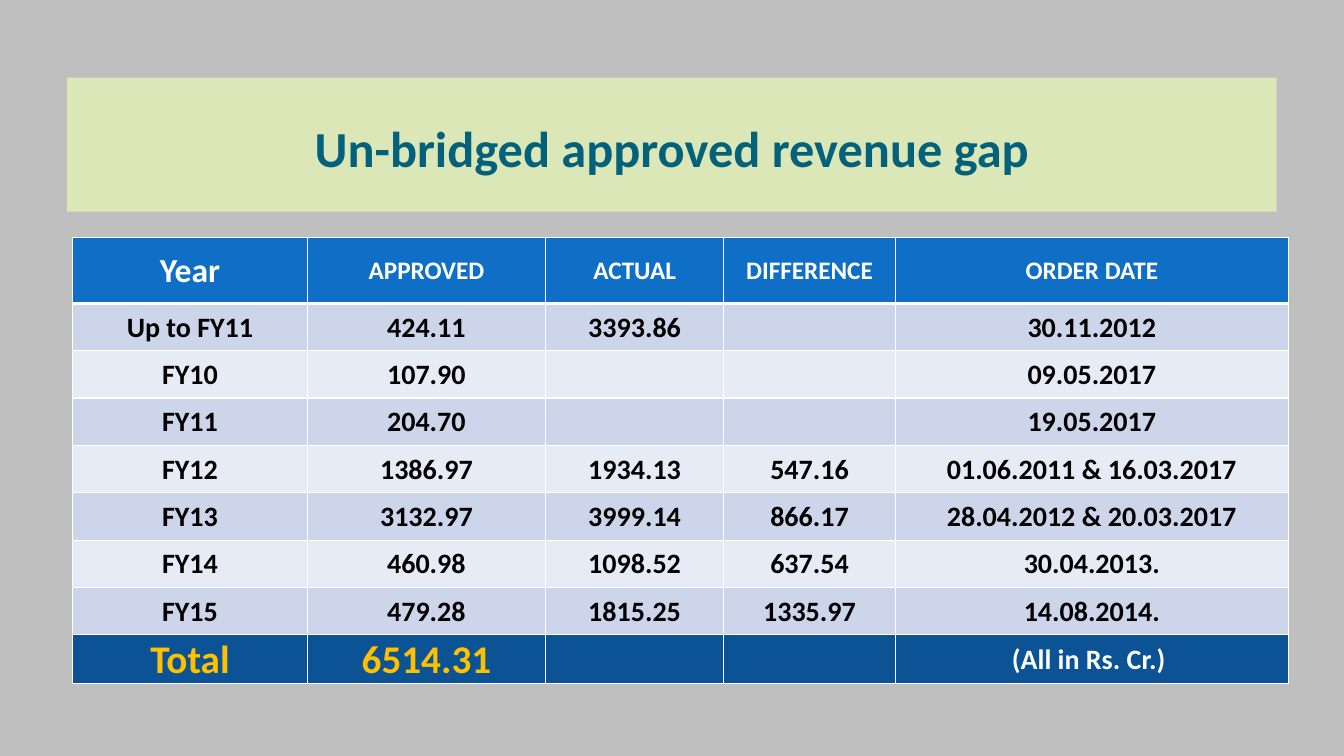
from lxml import etree
from pptx import Presentation
from pptx.dml.color import RGBColor
from pptx.enum.shapes import MSO_SHAPE
from pptx.enum.text import MSO_ANCHOR, PP_ALIGN
from pptx.oxml.ns import qn
from pptx.util import Inches, Pt

RECT = MSO_SHAPE.RECTANGLE
MIDDLE = MSO_ANCHOR.MIDDLE
CENTER = PP_ALIGN.CENTER

TITLE = "Un-bridged approved revenue gap"
ROWS = [
    ("Year", "APPROVED", "ACTUAL", "DIFFERENCE", "ORDER DATE"),
    ("Up to FY11", "424.11", "3393.86", "", "30.11.2012"),
    ("FY10", "107.90", "", "", "09.05.2017"),
    ("FY11", "204.70", "", "", "19.05.2017"),
    ("FY12", "1386.97", "1934.13", "547.16", "01.06.2011 & 16.03.2017"),
    ("FY13", "3132.97", "3999.14", "866.17", "28.04.2012 & 20.03.2017"),
    ("FY14", "460.98", "1098.52", "637.54", "30.04.2013."),
    ("FY15", "479.28", "1815.25", "1335.97", "14.08.2014."),
    ("Total", "6514.31", "", "", "(All in Rs. Cr.) "),
]
COLS = (2.33, 2.36, 1.77, 1.7, 3.9)
HEAD, BODY = 0.65, 0.47
WIDE, HIGH = 13.33, 7.5
LAST = len(ROWS) - 1
COLORS = {
    "back": "BFBFBF", "banner": "DBE7B6", "title": "04617B",
    "head": "0F6FC6", "odd": "CCD5EA", "even": "E7EBF5",
    "total": "0B5394", "gold": "FFC000", "white": "FFFFFF", "black": "000000",
}


def color(name):
    return RGBColor.from_string(COLORS[name])


def paint(fill, name):
    fill.solid()
    fill.fore_color.rgb = color(name)


def write(frame, text, size, tone):
    para = frame.paragraphs[0]
    para.alignment = CENTER
    run = para.add_run()
    run.text = text
    look = {"name": "Calibri", "size": Pt(size), "bold": True}
    for key, value in look.items():
        setattr(run.font, key, value)
    run.font.color.rgb = color(tone)


def border(cell, row):
    props = cell._tc.get_or_add_tcPr()
    points = {"L": 1, "R": 1, "T": 3 if row == 1 else 1, "B": 3 if row == 0 else 1}
    for side, width in points.items():
        line = etree.SubElement(props, qn("a:ln" + side), w=str(Pt(width)))
        solid = etree.SubElement(line, qn("a:solidFill"))
        etree.SubElement(solid, qn("a:srgbClr"), val=COLORS["white"])


def style(row, col):
    if row == 0:
        return "head", 24 if col == 0 else 18, "white"
    if row == LAST:
        return ("total", 28, "gold") if col < 2 else ("total", 20, "white")
    return "odd" if row % 2 else "even", 20, "black"


deck = Presentation()
deck.slide_width, deck.slide_height = Inches(WIDE), Inches(HIGH)
slide = deck.slides.add_slide(deck.slide_layouts[6])
paint(slide.background.fill, "back")

banner = slide.shapes.add_shape(
    RECT, *[Inches(n) for n in (WIDE * 0.05, 0.77, WIDE * 0.9, 1.33)])
banner.shadow.inherit = False
banner.line.fill.background()
paint(banner.fill, "banner")
frame = banner.text_frame
inset = {"margin_left": 0, "margin_right": 0, "margin_top": Inches(0.05),
         "margin_bottom": 0, "vertical_anchor": MIDDLE, "word_wrap": True}
for key, value in inset.items():
    setattr(frame, key, value)
write(frame, TITLE, 36, "title")

table = slide.shapes.add_table(
    len(ROWS), len(COLS), Inches(0.72), Inches(2.36),
    Inches(sum(COLS)), Inches(HEAD + BODY * LAST)).table
for col, width in enumerate(COLS):
    table.columns[col].width = Inches(width)

pads = {"margin_left": Inches(0.01), "margin_right": Inches(0.01),
        "margin_top": Inches(0.01), "margin_bottom": 0, "vertical_anchor": MIDDLE}
for row, texts in enumerate(ROWS):
    table.rows[row].height = Inches(BODY if row else HEAD)
    for col, text in enumerate(texts):
        cell = table.cell(row, col)
        fill, size, tone = style(row, col)
        border(cell, row)
        paint(cell.fill, fill)
        for key, value in pads.items():
            setattr(cell, key, value)
        if text:
            write(cell.text_frame, text, size, tone)

deck.save("out.pptx")
